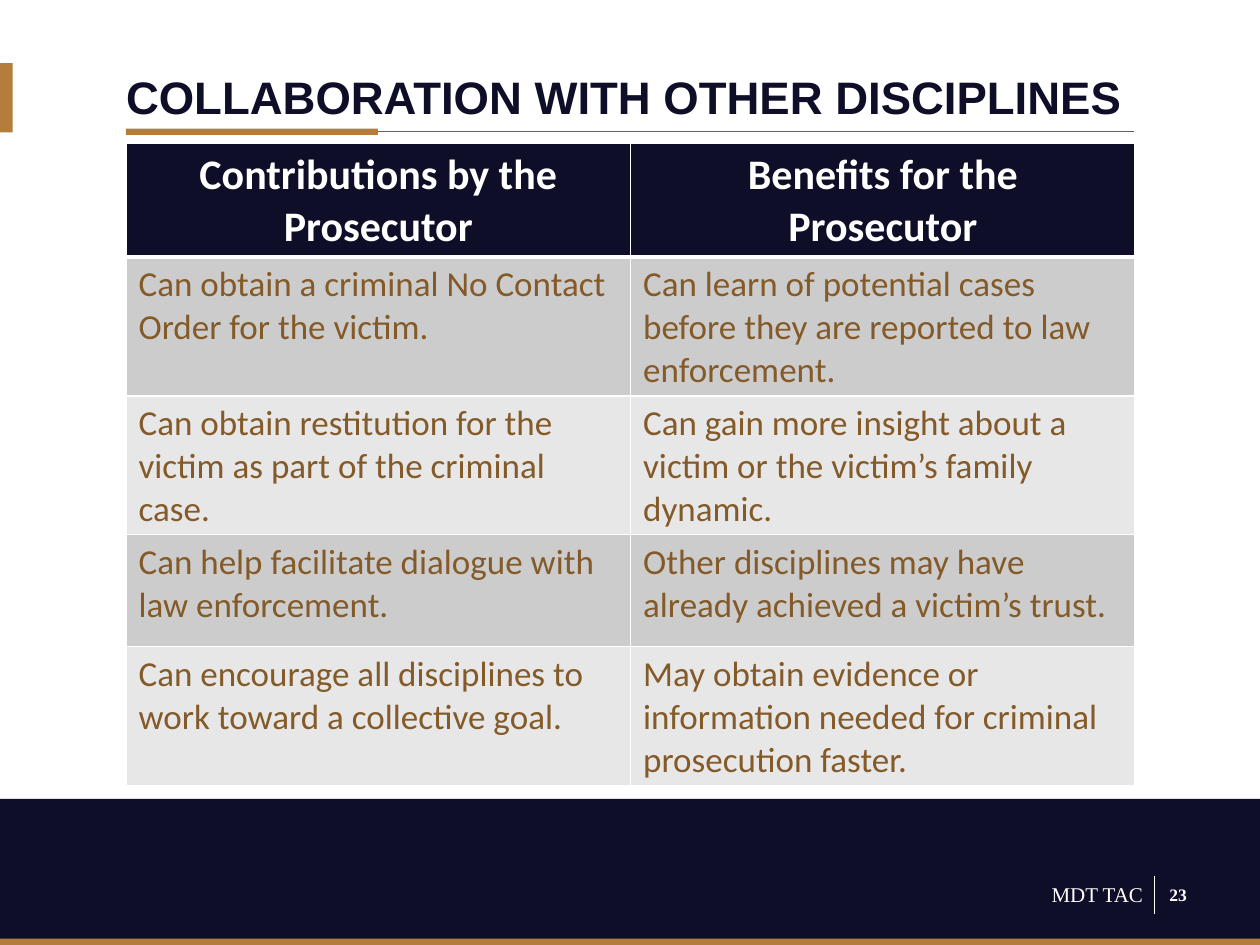
from pptx import Presentation, util as u
from pptx.dml.color import RGBColor
from pptx.enum import shapes, text
from pptx.oxml import parse_xml
from pptx.oxml.ns import nsdecls, qn
from lxml import etree

NAVY, GOLD, BROWN, WHITE = "0E0E28", "B57D3B", "845A28", "FFFFFF"
BANDS = ["CCCCCD", "E7E7E8"]
COLS, ROWS = 10, 7.5  # grid of one-inch cells
ALIGN, ANCHOR = text.PP_ALIGN, text.MSO_ANCHOR


def tint(code):
    return RGBColor.from_string(code)


def write(frame, words, size=20, font="Calibri", color=WHITE, bold=False,
          align=ALIGN.LEFT, anchor=ANCHOR.TOP, inset=None):
    """Fill a text frame; each line of words is one paragraph."""
    frame.word_wrap = True
    frame.vertical_anchor = anchor
    if inset is not None:
        frame.margin_left = frame.margin_top = frame.margin_bottom = 0
        frame.margin_right = u.Inches(inset)
    frame.text = words
    for par in frame.paragraphs:
        par.alignment = align
        for run in par.runs:
            run.font.size, run.font.name = u.Pt(size), font
            run.font.bold = bold
            run.font.color.rgb = tint(color)


class Page:
    def __init__(self):
        self.deck = Presentation()
        self.deck.slide_width = u.Inches(COLS)
        self.deck.slide_height = u.Inches(ROWS)
        self.slide = self.deck.slides.add_slide(self.deck.slide_layouts[5])
        self.items = self.slide.shapes

    def place(self, *cells):
        return [u.Inches(cell) for cell in cells]

    def title(self, words, *box):
        head = self.items.title
        head.left, head.top, head.width, head.height = self.place(*box)
        head.text_frame.auto_size = text.MSO_AUTO_SIZE.NONE
        write(head.text_frame, words, size=26, font="Arial", color=NAVY,
              bold=True, anchor=ANCHOR.MIDDLE, inset=0)

    def bar(self, color, *box):
        bar = self.items.add_shape(shapes.MSO_SHAPE.RECTANGLE, *self.place(*box))
        bar.shadow.inherit = False
        bar.fill.solid()
        bar.fill.fore_color.rgb = tint(color)
        bar.line.fill.background()

    def rule(self, color, *ends):
        rule = self.items.add_connector(shapes.MSO_CONNECTOR.STRAIGHT,
                                        *self.place(*ends))
        rule.line.color.rgb = tint(color)
        rule.line.width = u.Pt(0.5)
        etree.SubElement(rule._element.spPr, qn("a:effectLst"))

    def note(self, words, *box, **style):
        note = self.items.add_textbox(*self.place(*box))
        write(note.text_frame, words, font="Times New Roman",
              anchor=ANCHOR.MIDDLE, **style)

    def edge(self, cell, base):
        props = cell._tc.get_or_add_tcPr()
        for side, width in dict(L=1, R=1, T=1, B=base).items():
            props.append(parse_xml(
                f'<a:ln{side} {nsdecls("a")} w="{u.Pt(width)}"><a:solidFill>'
                f'<a:srgbClr val="{WHITE}"/></a:solidFill></a:ln{side}>'))

    def table(self, rows, highs, *box):
        grid = self.items.add_table(len(rows), len(rows[0]),
                                    *self.place(*box)).table
        for r, (row, high) in enumerate(zip(rows, highs)):
            grid.rows[r].height = u.Inches(high)
            for c, words in enumerate(row):
                cell = grid.cell(r, c)
                self.edge(cell, 1 if r else 3)
                cell.fill.solid()
                cell.fill.fore_color.rgb = tint(BANDS[(r - 1) % 2] if r else NAVY)
                if r:
                    write(cell.text_frame, words, color=BROWN)
                else:
                    write(cell.text_frame, words, size=24, bold=True,
                          align=ALIGN.CENTER)
                    cell.vertical_anchor = ANCHOR.MIDDLE


def main():
    page = Page()

    # Title with its rule and accents
    page.title("COLLABORATION WITH OTHER DISCIPLINES", 1, 0.48, 8.85, 0.57)
    page.rule("636261", 1, 1.04, 9, 1.04)
    page.bar(GOLD, 1, 1.02, 2, 0.05)
    page.bar(GOLD, 0, 0.5, 0.1, 0.55)

    # Footer
    page.bar(NAVY, 0, 6.34, COLS, ROWS - 6.34)
    page.bar(GOLD, 0, ROWS - 0.05, COLS, 0.05)
    page.note("MDT TAC", 4.62, 6.95, 4.55, 0.3, size=12,
              align=ALIGN.RIGHT, inset=0.1)
    page.rule(WHITE, 9.16, 6.95, 9.16, 7.25)
    page.note("23", 9.2, 6.95, 0.3, 0.3, size=10, bold=True,
              align=ALIGN.CENTER, inset=0)

    # Contributions and benefits
    page.table([
        ("Contributions by the Prosecutor", "Benefits for the\nProsecutor"),
        ("Can obtain a criminal No Contact Order for the victim.",
         "Can learn of potential cases before they are reported to law enforcement."),
        ("Can obtain restitution for the victim as part of the criminal case.",
         "Can gain more insight about a victim or the victim’s family dynamic."),
        ("Can help facilitate dialogue with law enforcement.",
         "Other disciplines may have already achieved a victim’s trust."),
        ("Can encourage all disciplines to work toward a collective goal.",
         "May obtain evidence or information needed for criminal prosecution faster."),
    ], [0.88] + [0.89] * 4, 1, 1.14, 8.01, 5.09)

    page.deck.save("out.pptx")


if __name__ == "__main__":
    main()
